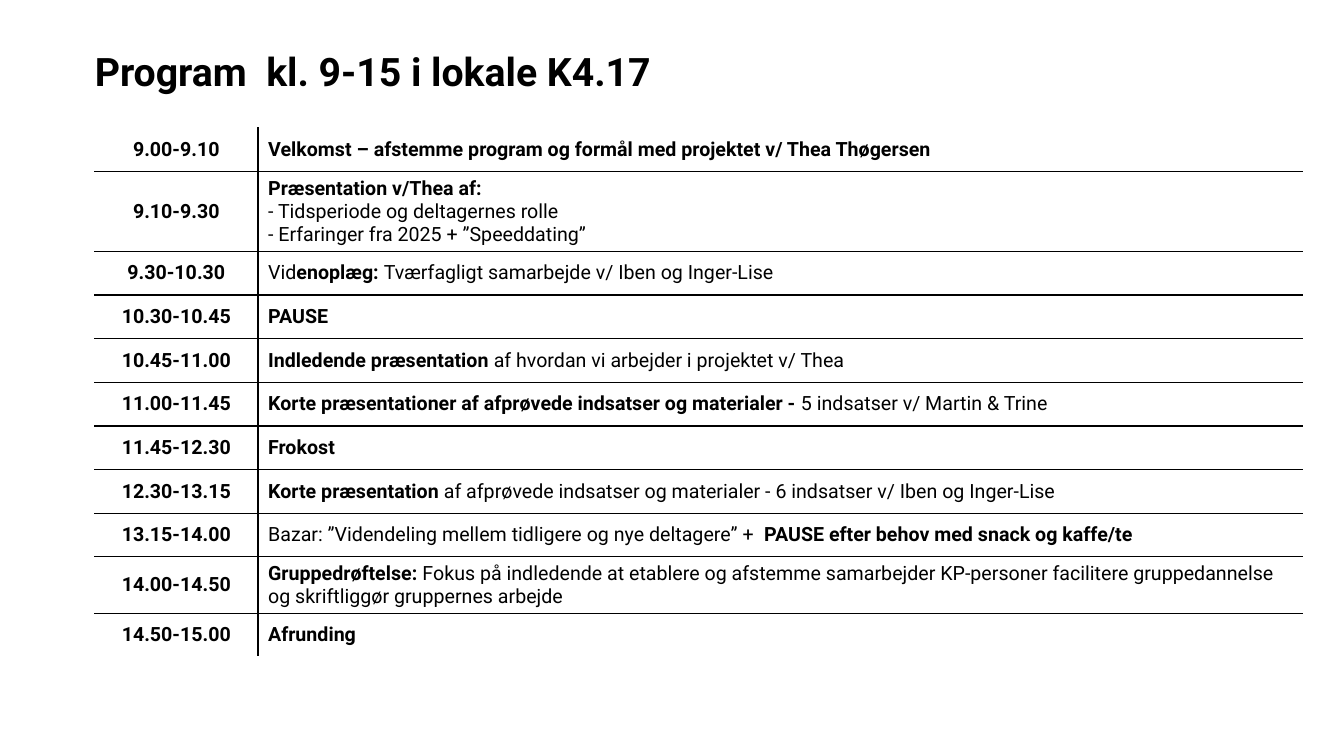
from pptx import Presentation
from pptx.dml.color import RGBColor
from pptx.enum.text import MSO_ANCHOR, MSO_AUTO_SIZE, PP_ALIGN
from pptx.oxml import parse_xml
from pptx.oxml.ns import nsdecls
from pptx.util import Pt

PX = 3048
BLACK = RGBColor(0, 0, 0)
LEFT, CENTER = PP_ALIGN.LEFT, PP_ALIGN.CENTER
TOP, MIDDLE = MSO_ANCHOR.TOP, MSO_ANCHOR.MIDDLE
NO_FIT = MSO_AUTO_SIZE.NONE
FONT = "Roboto"
ROW = 130
COLS = [486, 3108]
MARK = "*"

PLAN = [
    ("9.00-9.10", "*Velkomst – afstemme program og formål med projektet v/ Thea Thøgersen"),
    ("9.10-9.30", "*Præsentation v/Thea af:\n- Tidsperiode og deltagernes rolle\n"
                  "- Erfaringer fra 2025 + ”Speeddating”"),
    ("9.30-10.30", "Vid*enoplæg: *Tværfagligt samarbejde v/ Iben og Inger-Lise"),
    ("10.30-10.45", "*PAUSE"),
    ("10.45-11.00", "*Indledende præsentation *af hvordan vi arbejder i projektet v/ Thea"),
    ("11.00-11.45", "*Korte præsentationer af afprøvede indsatser og materialer - "
                    "*5 indsatser v/ Martin & Trine"),
    ("11.45-12.30", "*Frokost"),
    ("12.30-13.15", "*Korte præsentation* af afprøvede indsatser og materialer - "
                    "6 indsatser v/ Iben og Inger-Lise"),
    ("13.15-14.00", "Bazar: ”Videndeling mellem tidligere og nye deltagere” +  "
                    "*PAUSE efter behov med snack og kaffe/te"),
    ("14.00-14.50", "*Gruppedrøftelse:* Fokus på indledende at etablere og afstemme samarbejder "
                    "KP-personer facilitere gruppedannelse og skriftliggør gruppernes arbejde"),
    ("14.50-15.00", "*Afrunding"),
]


def style(para, size, align):
    para.alignment = align
    para.font.name = FONT
    para.font.size = Pt(size)
    para.font.color.rgb = BLACK


def fill_cell(cell, text, align, sides):
    for side in sides:
        cell._tc.get_or_add_tcPr().append(parse_xml(
            f'<a:ln{side} {nsdecls("a")} w="12700"><a:solidFill>'
            f'<a:srgbClr val="{BLACK}"/></a:solidFill></a:ln{side}>'))
    cell.fill.background()
    cell.vertical_anchor = MIDDLE
    frame = cell.text_frame
    for i, line in enumerate(text.split("\n")):
        para = frame.add_paragraph() if i else frame.paragraphs[0]
        style(para, 14, align)
        for j, part in enumerate(line.split(MARK)):
            if part:
                run = para.add_run()
                run.text = part
                run.font.bold = j % 2 == 1


deck = Presentation()
deck.slide_width = 4000 * PX
deck.slide_height = 2250 * PX
slide = deck.slides.add_slide(deck.slide_layouts[5])

title = slide.shapes.title
title.left, title.top, title.width, title.height = [n * PX for n in (282, 156, 3381, 171)]
frame = title.text_frame
frame.text = "Program  kl. 9-15 i lokale K4.17"
frame.margin_left = frame.margin_right = frame.margin_top = frame.margin_bottom = 0
frame.vertical_anchor = TOP
frame.auto_size = NO_FIT
frame.word_wrap = True
head = frame.paragraphs[0]
style(head, 28, LEFT)
head.font.bold = True
head.line_spacing = 0.9

last = len(PLAN) - 1
table = slide.shapes.add_table(
    len(PLAN), len(COLS), 282 * PX, 381 * PX, sum(COLS) * PX, len(PLAN) * ROW * PX).table
table.first_row = False
table.horz_banding = False
for col, width in zip(table.columns, COLS):
    col.width = width * PX
for i, (time, text) in enumerate(PLAN):
    table.rows[i].height = ROW * PX
    rules = ("T" if i else "") + ("B" if i < last else "")
    fill_cell(table.cell(i, 0), MARK + time, CENTER, "R" + rules)
    fill_cell(table.cell(i, 1), text, LEFT, "L" + rules)

deck.save("out.pptx")
